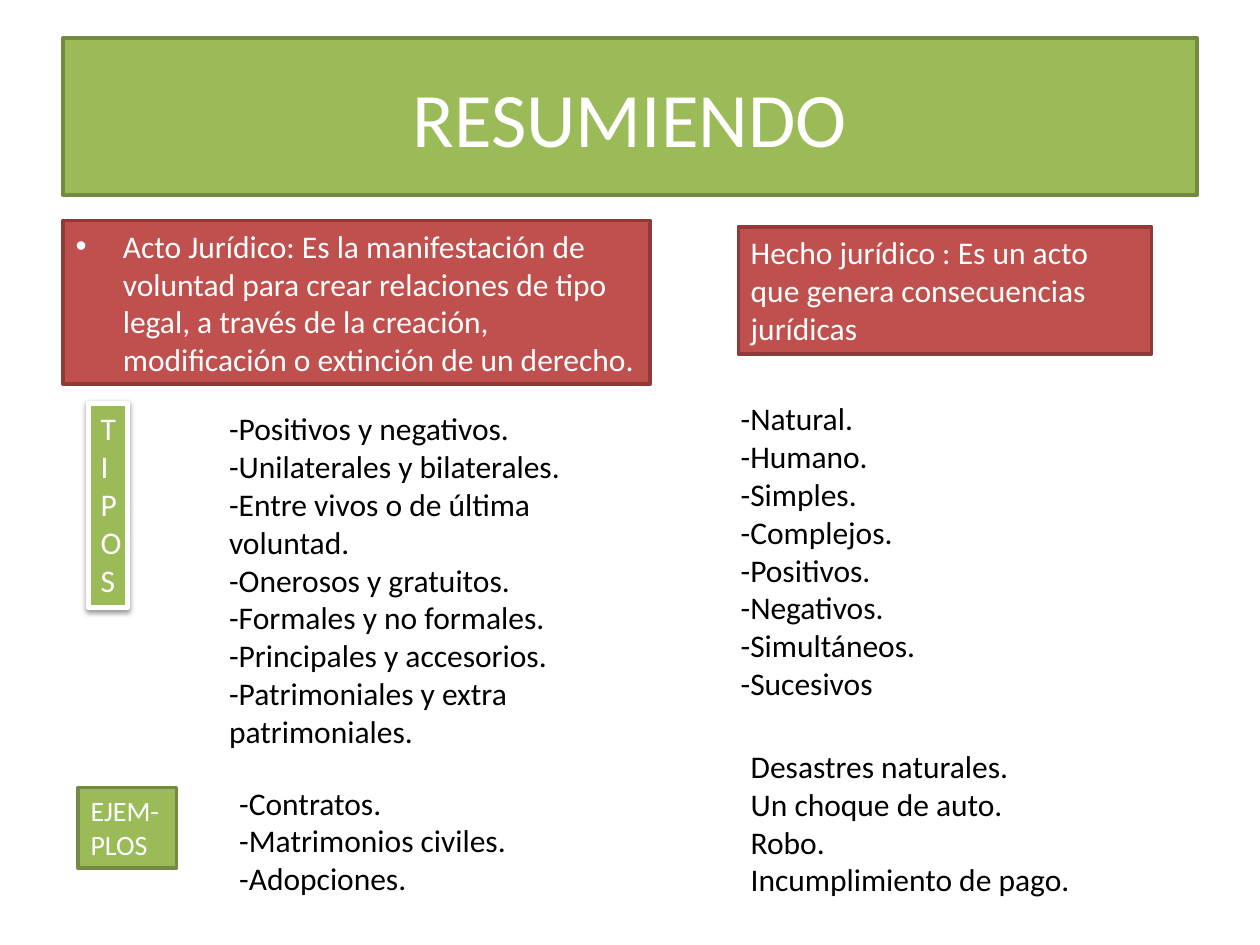
import dataclasses

import lxml.etree
import pptx
import pptx.dml.color
import pptx.enum.shapes
import pptx.enum.text
import pptx.oxml.ns
import pptx.util

Inches = pptx.util.Inches
Pt = pptx.util.Pt
RGB = pptx.dml.color.RGBColor.from_string
ANCHOR = pptx.enum.text.MSO_ANCHOR
ALIGN = pptx.enum.text.PP_ALIGN


@dataclasses.dataclass(frozen=True)
class Theme:
    font: str = "Calibri"
    green: str = "9BBB59"
    green_line: str = "738A42"
    red: str = "C0504D"
    red_line: str = "8E3B39"
    white: str = "FFFFFF"
    black: str = "000000"
    title: int = 44
    body: int = 18
    label: int = 16
    border: int = 2
    frame: int = 3


THEME = Theme()


def place(sp, x, y, w, h):
    sp.left, sp.top, sp.width, sp.height = (Inches(v) for v in (x, y, w, h))


def paint(sp, fill, line, width=THEME.border):
    sp.fill.solid()
    sp.fill.fore_color.rgb = RGB(fill)
    sp.line.color.rgb = RGB(line)
    sp.line.width = Pt(width)


def write(sp, text, size, color, align=ALIGN.LEFT, anchor=ANCHOR.TOP):
    tf = sp.text_frame
    tf.text = text
    tf.word_wrap = True
    tf.auto_size = pptx.enum.text.MSO_AUTO_SIZE.NONE
    tf.vertical_anchor = anchor
    for p in tf.paragraphs:
        p.alignment = align
        for r in p.runs:
            r.font.name = THEME.font
            r.font.size = Pt(size)
            r.font.color.rgb = RGB(color)


def add_box(s, box, text, size, fill, line, width=THEME.border):
    sp = s.shapes.add_shape(
        pptx.enum.shapes.MSO_SHAPE.RECTANGLE, *(Inches(v) for v in box))
    sp.shadow.inherit = False
    paint(sp, fill, line, width)
    write(sp, text, size, THEME.white)
    return sp


def add_list(s, box, items):
    sp = s.shapes.add_textbox(*(Inches(v) for v in box))
    write(sp, "\n".join(items), THEME.body, THEME.black)


def add_shadow(sp):
    qn = pptx.oxml.ns.qn
    effects = sp._element.spPr.find(qn("a:effectLst"))
    shadow = lxml.etree.SubElement(
        effects, qn("a:outerShdw"), blurRad=str(Pt(3.1)), dist=str(Pt(1.6)),
        dir="5400000", rotWithShape="0")
    color = lxml.etree.SubElement(shadow, qn("a:srgbClr"), val=THEME.black)
    lxml.etree.SubElement(color, qn("a:alpha"), val="38000")


def title_band(s, box):
    sp = s.shapes.title
    place(sp, *box)
    paint(sp, THEME.green, THEME.green_line)
    write(sp, "RESUMIENDO", THEME.title, THEME.white,
          ALIGN.CENTER, ANCHOR.MIDDLE)


def act_column(s, box):
    x, y, w, h = box
    sp = s.placeholders[1]
    place(sp, x, y, w, 1.3)
    paint(sp, THEME.red, THEME.red_line)
    write(sp, "Acto Jurídico: Es la manifestación de voluntad para crear "
          "relaciones de tipo legal, a través de la creación, modificación "
          "o extinción de un derecho.", THEME.body, THEME.white)
    add_list(s, (x + 1.22, y + 1.45, w - 1.22, 3.13), [
        "-Positivos y negativos.",
        "-Unilaterales y bilaterales.",
        "-Entre vivos o de última voluntad.",
        "-Onerosos y gratuitos.",
        "-Formales y no formales.",
        "-Principales y accesorios.",
        "-Patrimoniales y extra patrimoniales.",
    ])
    add_list(s, (x + 1.3, y + h - 1.31, w - 1.38, 1.31), [
        "-Contratos.",
        "-Matrimonios civiles.",
        "-Adopciones.",
    ])


def fact_column(s, box):
    x, y, w, h = box
    add_box(s, (x + 0.08, y, w - 0.08, 1.01),
            "Hecho jurídico : Es un acto que genera consecuencias jurídicas",
            THEME.body, THEME.red, THEME.red_line)
    add_list(s, (x, y + 1.32, w, 2.52), [
        "-Natural.",
        "-Humano.",
        "-Simples.",
        "-Complejos.",
        "-Positivos.",
        "-Negativos.",
        "-Simultáneos.",
        "-Sucesivos",
    ])
    add_list(s, (x + 0.08, y + h - 1.62, w - 0.23, 1.62), [
        "Desastres naturales.",
        "Un choque de auto.",
        "Robo.",
        "Incumplimiento de pago.",
    ])


def row_labels(s, box):
    x, y, w, h = box
    sp = add_box(s, (x + 0.08, y, 0.31, 1.62), "T\nI\nP\nOS", THEME.body,
                 THEME.green, THEME.white, THEME.frame)
    add_shadow(sp)
    add_box(s, (x, y + h - 0.64, w, 0.64), "EJEM-PLOS", THEME.label,
            THEME.green, THEME.green_line)


def main():
    prs = pptx.Presentation()
    prs.slide_width, prs.slide_height = Inches(10), Inches(7.5)
    s = prs.slides.add_slide(prs.slide_layouts[1])
    title_band(s, (0.5, 0.3, 9, 1.25))
    act_column(s, (0.5, 1.75, 4.66, 5.73))
    fact_column(s, (5.78, 1.8, 3.36, 5.7))
    row_labels(s, (0.62, 3.2, 0.78, 3.69))
    prs.save("out.pptx")


if __name__ == "__main__":
    main()
